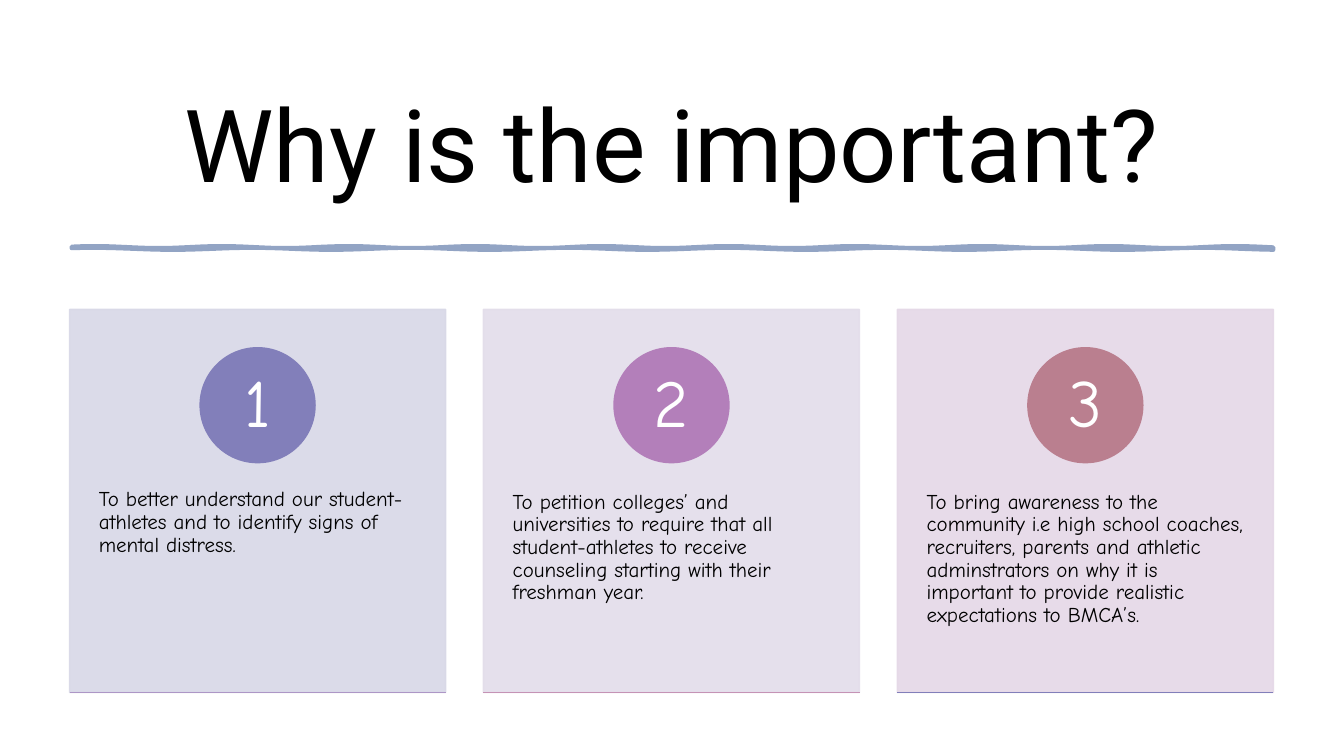
from math import sin
from lxml import etree
from pptx import Presentation
from pptx.dml.color import RGBColor
from pptx.enum import shapes, text
from pptx.oxml.ns import qn
from pptx.util import Inches, Pt

BLACK = RGBColor(0x00, 0x00, 0x00)
WHITE = RGBColor(0xFF, 0xFF, 0xFF)
WAVE = RGBColor(0x92, 0xA4, 0xC4)
LILAC = RGBColor(0xD8, 0xD8, 0xE7)
MAUVE = RGBColor(0xE3, 0xDD, 0xEA)
PINK = RGBColor(0xE5, 0xD8, 0xE7)
INDIGO = RGBColor(0x82, 0x7F, 0xBA)
ORCHID = RGBColor(0xB3, 0x7F, 0xBA)
ROSE = RGBColor(0xBA, 0x7F, 0x8F)
VIOLET = RGBColor(0xAD, 0x96, 0xC6)
BLUSH = RGBColor(0xC5, 0x93, 0xB5)

# Card wording, card colour, badge colour, base line colour
CARDS = [
    ("To better understand our student-athletes and to identify signs of "
     "mental distress.", LILAC, INDIGO, VIOLET),
    ("To petition colleges’ and universities to require that all "
     "student-athletes to receive counseling starting with their "
     "freshman year.", MAUVE, ORCHID, BLUSH),
    ("To bring awareness to the community i.e high school coaches, "
     "recruiters, parents and athletic adminstrators on why it is "
     "important to provide realistic expectations to BMCA’s.",
     PINK, ROSE, INDIGO),
]
LEFT, TOP, WIDE, HIGH, STEP = 0.69, 3.07, 3.73, 3.8, 4.105
BADGE, LABEL = 1.14, 0.81


def paint(shape, color, width=1, alpha=None):
    """Give a shape one colour for fill and line."""
    shape.shadow.inherit = False
    shape.fill.solid()
    shape.fill.fore_color.rgb = color
    shape.line.color.rgb = color
    shape.line.width = Pt(width)
    if alpha:
        for tone in shape._element.spPr.iter(qn("a:srgbClr")):
            etree.SubElement(tone, qn("a:alpha")).set("val", str(alpha * 1000))


def block(slide, kind, box, color, alpha=None):
    shape = slide.shapes.add_shape(kind, *map(Inches, box))
    paint(shape, color, alpha=alpha)


def write(slide, words, box, size, font="Comic Neue", color=BLACK,
          align=text.PP_ALIGN.LEFT, anchor=text.MSO_ANCHOR.TOP,
          pad=(0.1, 0.05), lead=0.9):
    frame = slide.shapes.add_textbox(*map(Inches, box)).text_frame
    frame.word_wrap = True
    frame.vertical_anchor = anchor
    frame.margin_left = frame.margin_right = Inches(pad[0])
    frame.margin_top = frame.margin_bottom = Inches(pad[1])
    par = frame.paragraphs[0]
    par.alignment = align
    par.line_spacing = lead
    run = par.add_run()
    run.text = words
    run.font.size = Pt(size)
    run.font.name = font
    run.font.color.rgb = color


def rule(slide, left, top, width, color):
    line = slide.shapes.add_connector(
        shapes.MSO_CONNECTOR.STRAIGHT, Inches(left), Inches(top),
        Inches(left + width), Inches(top))
    line.line.color.rgb = color
    line.line.width = Pt(1)
    etree.SubElement(line._element.spPr, qn("a:effectLst"))


def wave(slide, left, right, top, depth, color):
    """Draw a hand-made line between two gently waving edges."""
    count = 120
    xs = [left + (right - left) * i / count for i in range(count + 1)]
    upper = [(x, top + 0.01 * sin(5 * x)) for x in xs]
    lower = [(x, top + depth + 0.01 * sin(4 * x + 1)) for x in xs]
    edge = [(Inches(x), Inches(y)) for x, y in upper + lower[::-1]]
    pen = slide.shapes.build_freeform(*edge[0])
    pen.add_line_segments(edge[1:], close=True)
    paint(pen.convert_to_shape(), color, width=2.75)


def card(slide, index, words, back, badge, base):
    left = LEFT + STEP * index
    mid = left + WIDE / 2
    block(slide, shapes.MSO_SHAPE.RECTANGLE, (left, TOP, WIDE, HIGH), back, 90)
    write(slide, words, (left, 4.51, WIDE, 2.28), 15, pad=(0.29, 0.36))
    # Numbered badge
    block(slide, shapes.MSO_SHAPE.OVAL,
          (mid - BADGE / 2, 3.45, BADGE, BADGE), badge)
    write(slide, str(index + 1), (mid - LABEL / 2, 3.62, LABEL, LABEL), 48,
          color=WHITE, align=text.PP_ALIGN.CENTER,
          anchor=text.MSO_ANCHOR.MIDDLE, pad=(0.09, 0.01))
    rule(slide, left, TOP + HIGH, WIDE, base)


def main():
    deck = Presentation()
    deck.slide_width, deck.slide_height = Inches(13.33), Inches(7.5)
    slide = deck.slides.add_slide(deck.slide_layouts[6])
    slide.background.fill.solid()
    slide.background.fill.fore_color.rgb = WHITE

    # Title and divider
    write(slide, "Why is the important?", (0.69, 0.69, 11.94, 1.44), 72,
          font="Roboto", align=text.PP_ALIGN.CENTER,
          anchor=text.MSO_ANCHOR.MIDDLE, lead=1.0)
    wave(slide, 0.71, 12.63, 2.45, 0.02, WAVE)

    # Three reasons
    for index, item in enumerate(CARDS):
        card(slide, index, *item)
    deck.save("out.pptx")


if __name__ == "__main__":
    main()
